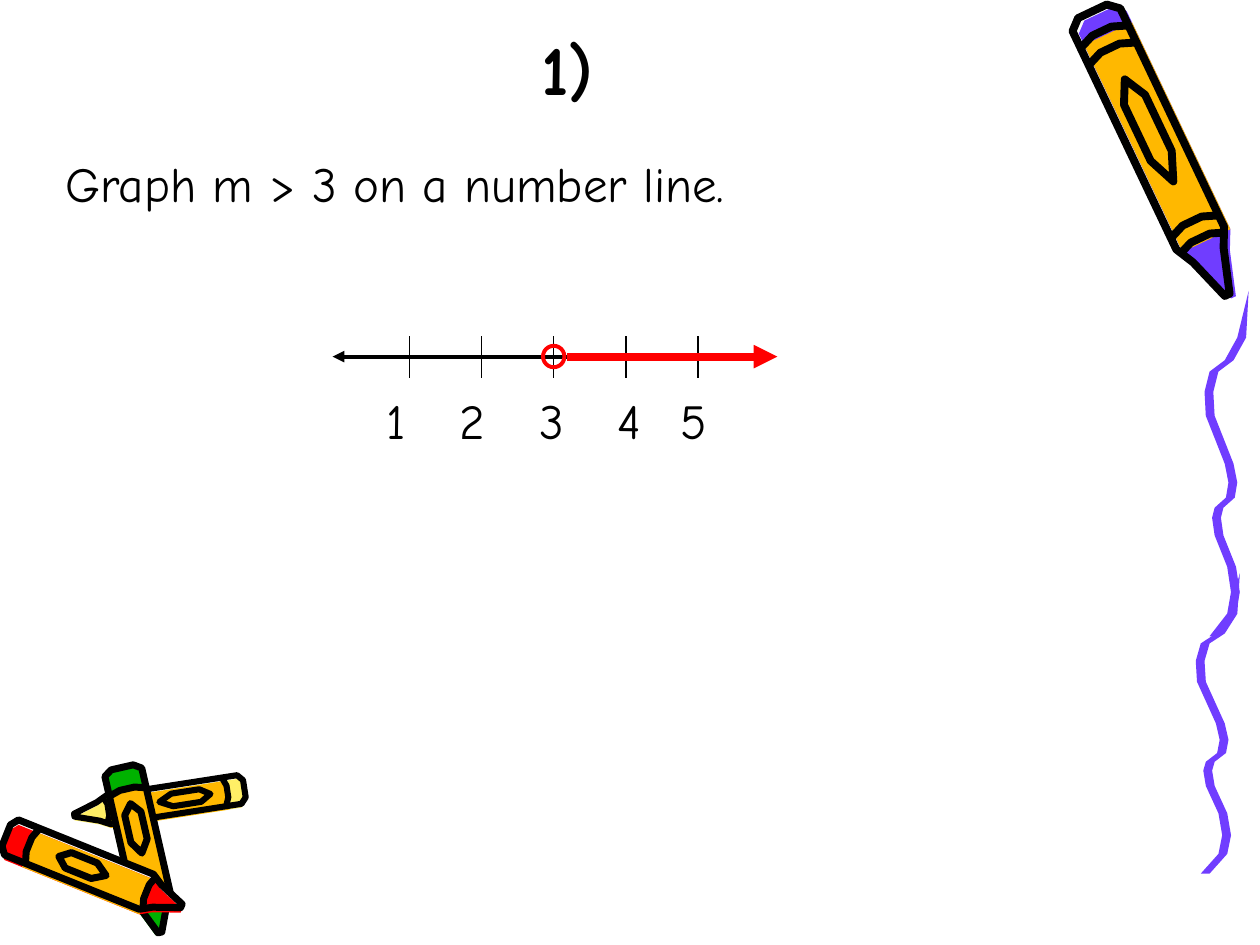
"""Builds a slide that graphs an inequality on a number line, framed by crayons."""
from math import hypot
from typing import NamedTuple, Optional

from lxml.etree import SubElement
from pptx import Presentation
from pptx.dml.color import RGBColor
from pptx.enum.shapes import MSO_CONNECTOR, MSO_SHAPE
from pptx.enum.text import MSO_ANCHOR, PP_ALIGN
from pptx.oxml.ns import qn
from pptx.util import Inches, Pt

Point = tuple[float, float]

FONT = "Comic Neue"
BLACK, WHITE, RED = "000000", "F8F8F8", "FF0000"
PURPLE, ORANGE, YELLOW, GREEN = "703DFF", "FFB800", "FFEF66", "00B200"

AXIS_Y = 2.83
FIRST_TICK, LAST_TICK, TICK_COUNT = 3.25, 5.54, 5
TICK_TOP, TICK_BOTTOM = 2.67, 3
NUMBER_LEFTS = (2.97, 3.55, 4.18, 4.8, 5.3)
OPEN_VALUE = 3

SHOULDER = 0.8
TIP_HALF = [(0, 0.3), (0.03, 0.5), (SHOULDER, 0.5), (0.86, 0.32), (1, 0.05)]
LENS_HALF = [(0, 0), (0.2, 0.22), (0.75, 0.22), (1, 0)]
BAND_BOW = [(0.02, -0.5), (0, -0.2), (0, 0.2), (0.02, 0.5)]

WAVE = [(9.6, 5.05), (9.74, 4.87), (9.77, 4.7), (9.74, 4.5), (9.64, 4.25), (9.62, 4.11),
        (9.64, 4.03), (9.73, 3.95), (9.75, 3.83), (9.72, 3.68), (9.57, 3.3), (9.56, 3.11),
        (9.6, 2.95), (9.72, 2.86), (9.82, 2.68)]
WAVE_TIP = (9.91, 2.31)
WAVE_WIDTH = 0.07


class Crayon(NamedTuple):
    wax: str
    tail: Point
    tip: Point
    width: float
    ink: float
    shift: Point
    bands: tuple[float, ...]
    lens: tuple[float, float]

    def place(self, points: list[Point], shift: Point = (0, 0)) -> list[Point]:
        """Map (along, across) fractions of the crayon to slide inches."""
        dx, dy = self.tip[0] - self.tail[0], self.tip[1] - self.tail[1]
        across = self.width / hypot(dx, dy)
        return [(self.tail[0] + u * dx + v * across * dy + shift[0],
                 self.tail[1] + u * dy - v * across * dx + shift[1]) for u, v in points]


class Label(NamedTuple):
    text: str
    left: float
    top: float
    width: float
    height: float
    size: int = 28
    bold: bool = False
    align: PP_ALIGN = PP_ALIGN.LEFT
    anchor: MSO_ANCHOR = MSO_ANCHOR.TOP


class Line(NamedTuple):
    x1: float
    y1: float
    x2: float
    y2: float
    width: float
    color: str = BLACK
    start_arrow: bool = False
    end_arrow: bool = False


CRAYONS = [
    Crayon(PURPLE, (8.67, 0.09), (9.74, 2.34), 0.42, 4.5, (0.05, 0.02), (0.07, 0.13, 0.74, SHOULDER), (0.24, 0.6)),
    Crayon(YELLOW, (1.94, 6.26), (0.59, 6.47), 0.23, 3.5, (0, 0.03), (0.1, SHOULDER), (0.2, 0.5)),
    Crayon(GREEN, (0.97, 6.09), (1.27, 7.4), 0.3, 4, (-0.02, 0.02), (0.13, SHOULDER), (0.22, 0.52)),
    Crayon(RED, (0.05, 6.63), (1.44, 7.19), 0.3, 4, (0, 0.04), (0.13, SHOULDER), (0.3, 0.57)),
]

LABELS = [
    Label("1)", 0.75, 0.17, 7.51, 0.75, 40, True, PP_ALIGN.CENTER, MSO_ANCHOR.BOTTOM),
    Label("Graph m > 3 on a number line.", 0.42, 1.17, 8.58, 0.57),
    *(Label(str(n), left, 3.05, 0.5, 0.57) for n, left in enumerate(NUMBER_LEFTS, 1)),
]


def rgb(value: str) -> RGBColor:
    """Turn a hex string into a colour."""
    return RGBColor.from_string(value)


def mirrored(half: list[Point]) -> list[Point]:
    """Close a half outline by reflecting it across the long axis."""
    return half + [(u, -v) for u, v in reversed(half)]


def draw_path(s, points: list[Point], fill: Optional[str] = None, ink: float = 0, close: bool = True) -> None:
    """Draw a polygon or an open polyline, filled or inked in black."""
    corners = [(Inches(x), Inches(y)) for x, y in points]
    builder = s.shapes.build_freeform(*corners[0])
    builder.add_line_segments(corners[1:], close=close)
    sp = builder.convert_to_shape()
    sp.shadow.inherit = False
    if fill:
        sp.fill.solid()
        sp.fill.fore_color.rgb = rgb(fill)
    else:
        sp.fill.background()
    if ink:
        sp.line.color.rgb = rgb(BLACK)
        sp.line.width = Pt(ink)
    else:
        sp.line.fill.background()


def draw_crayon(s, c: Crayon) -> None:
    """Draw a crayon whose colours sit slightly off its ink outline."""
    body = mirrored(TIP_HALF)
    wrapper = mirrored([(c.bands[0], 0.5), (SHOULDER, 0.5)])
    start, end = c.lens
    lens = mirrored([(start + u * (end - start), v) for u, v in LENS_HALF])
    draw_path(s, c.place(body), WHITE)
    draw_path(s, c.place(body, c.shift), c.wax)
    draw_path(s, c.place(wrapper, c.shift), ORANGE)
    draw_path(s, c.place(body), ink=c.ink)
    draw_path(s, c.place(lens), ink=c.ink)
    for band in c.bands:
        bow = [(band + u, v) for u, v in BAND_BOW]
        draw_path(s, c.place(bow), ink=c.ink, close=False)


def draw_squiggle(s, dx: float = 0, dy: float = 0, y_scale: float = 1) -> None:
    """Draw a wavy ribbon of constant width that ends in a point."""
    right_edge = [(x + WAVE_WIDTH, y) for x, y in reversed(WAVE)]
    ribbon = WAVE + [WAVE_TIP] + right_edge
    draw_path(s, [(x + dx, y * y_scale + dy) for x, y in ribbon], PURPLE)


def draw_label(s, label: Label) -> None:
    """Add one text box with a single run."""
    box = (label.left, label.top, label.width, label.height)
    tf = s.shapes.add_textbox(*map(Inches, box)).text_frame
    tf.word_wrap = True
    tf.vertical_anchor = label.anchor
    p = tf.paragraphs[0]
    p.alignment = label.align
    r = p.add_run()
    r.text = label.text
    r.font.name, r.font.size, r.font.bold = FONT, Pt(label.size), label.bold
    r.font.color.rgb = rgb(BLACK)


def draw_line(s, line: Line) -> None:
    """Draw a straight line with optional arrowheads."""
    ends = map(Inches, (line.x1, line.y1, line.x2, line.y2))
    c = s.shapes.add_connector(MSO_CONNECTOR.STRAIGHT, *ends)
    c.line.width = Pt(line.width)
    c.line.color.rgb = rgb(line.color)
    ln = c.line._get_or_add_ln()
    for tag, wanted in (("a:headEnd", line.start_arrow), ("a:tailEnd", line.end_arrow)):
        if wanted:
            SubElement(ln, qn(tag), type="triangle")
    SubElement(c._element.spPr, qn("a:effectLst"))


def draw_open_circle(s, x: float, y: float, size: float) -> None:
    """Draw a hollow red circle centred on a point."""
    box = map(Inches, (x - size / 2, y - size / 2, size, size))
    sp = s.shapes.add_shape(MSO_SHAPE.OVAL, *box)
    sp.shadow.inherit = False
    sp.fill.background()
    sp.line.color.rgb = rgb(RED)
    sp.line.width = Pt(2.25)


def draw_number_line(s) -> None:
    """Draw the axis, its ticks, the open circle and the solution ray."""
    gap = (LAST_TICK - FIRST_TICK) / (TICK_COUNT - 1)
    ticks = [FIRST_TICK + i * gap for i in range(TICK_COUNT)]
    draw_line(s, Line(2.64, AXIS_Y, 6.14, AXIS_Y, 2.25, start_arrow=True, end_arrow=True))
    for x in ticks:
        draw_line(s, Line(x, TICK_TOP, x, TICK_BOTTOM, 0.75))
    draw_open_circle(s, ticks[OPEN_VALUE - 1], AXIS_Y, 0.17)
    draw_line(s, Line(4.5, AXIS_Y, 6.17, AXIS_Y, 4.5, RED, end_arrow=True))


def main() -> None:
    """Build and save the slide."""
    prs = Presentation()
    prs.slide_width, prs.slide_height = Inches(10), Inches(7.5)
    s = prs.slides.add_slide(prs.slide_layouts[6])
    draw_squiggle(s, dx=-0.07, dy=2.54, y_scale=0.87)
    draw_squiggle(s)
    for crayon in CRAYONS:
        draw_crayon(s, crayon)
    for label in LABELS:
        draw_label(s, label)
    draw_number_line(s)
    prs.save("out.pptx")


if __name__ == "__main__":
    main()
